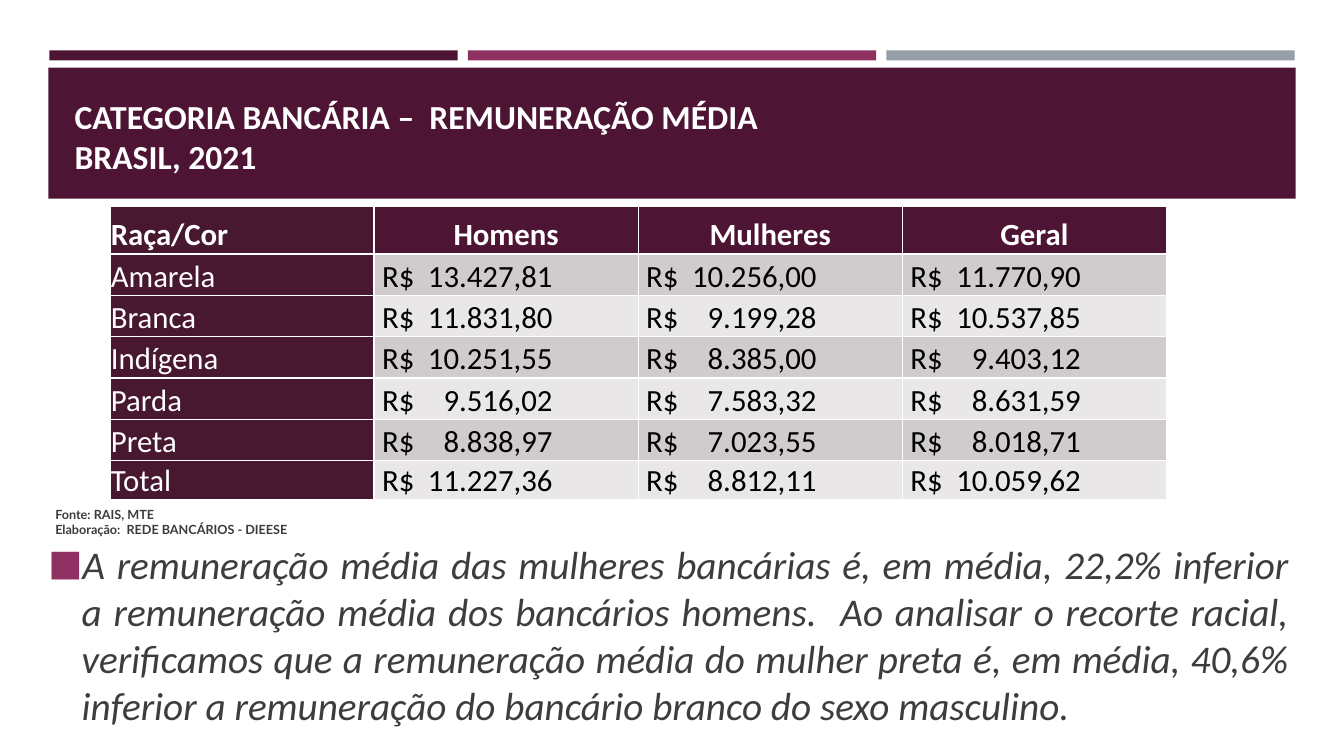
from lxml.etree import SubElement
from pptx import Presentation
from pptx.dml.color import RGBColor
from pptx.enum.shapes import MSO_SHAPE
from pptx.enum.text import MSO_ANCHOR, MSO_AUTO_SIZE, PP_ALIGN
from pptx.oxml.ns import qn
from pptx.util import Inches, Pt

PLUM, ROSE, GREY = "4D1434", "903163", "969FA7"
LABEL_FILL, BANDS = "481831", ("D0CCCE", "E9E7E8")
WHITE, BLACK = "FFFFFF", "000000"

HEADERS = ["Raça/Cor", "Homens", "Mulheres", "Geral"]
SALARIES = [
    ["Amarela", "13.427,81", "10.256,00", "11.770,90"],
    ["Branca", "11.831,80", "9.199,28", "10.537,85"],
    ["Indígena", "10.251,55", "8.385,00", "9.403,12"],
    ["Parda", "9.516,02", "7.583,32", "8.631,59"],
    ["Preta", "8.838,97", "7.023,55", "8.018,71"],
    ["Total", "11.227,36", "8.812,11", "10.059,62"],
]
ROW_HEIGHTS = [0.47] + [0.41] * 5 + [0.39]
FINDING = (
    "A remuneração média das mulheres bancárias é, em média, 22,2% inferior a "
    "remuneração média dos bancários homens.  Ao analisar o recorte racial, "
    "verificamos que a remuneração média do mulher preta é, em média, 40,6% "
    "inferior a remuneração do bancário branco do sexo masculino."
)


def colour(value):
    return RGBColor.from_string(value)


class SalarySlide:
    def __init__(self, deck):
        self.page = deck.slides.add_slide(deck.slide_layouts[1])
        self.font = "Calibri"

    def format_text(self, para, size, ink, bold=False, italic=False, font=None):
        for span in para.runs:
            span.font.name = font or self.font
            span.font.size = Pt(size)
            span.font.bold = bold
            span.font.italic = italic
            span.font.color.rgb = colour(ink)

    def place(self, box, left, top, width, height, anchor):
        box.left, box.top = Inches(left), Inches(top)
        box.width, box.height = Inches(width), Inches(height)
        frame = box.text_frame
        frame.word_wrap = True
        frame.auto_size = MSO_AUTO_SIZE.NONE
        frame.vertical_anchor = anchor
        return frame

    def bar(self, left, top, width, height, fill):
        box = self.page.shapes.add_shape(
            MSO_SHAPE.RECTANGLE, Inches(left), Inches(top), Inches(width), Inches(height)
        )
        box.shadow.inherit = False
        box.fill.solid()
        box.fill.fore_color.rgb = colour(fill)
        box.line.fill.background()
        tree = box.element.getparent()
        tree.remove(box.element)
        tree.insert(tree.index(self.page.shapes.title.element), box.element)

    def title(self, text):
        frame = self.place(self.page.shapes.title, 0.64, 0.69, 12.06, 1.11, MSO_ANCHOR.BOTTOM)
        frame.text = text
        para = frame.paragraphs[0]
        para.alignment = PP_ALIGN.LEFT
        self.format_text(para, 24, WHITE, bold=True)

    def cell(self, cell, text, fill, ink, bold=False, align=PP_ALIGN.LEFT):
        cell.fill.solid()
        cell.fill.fore_color.rgb = colour(fill)
        cell.margin_left = cell.margin_top = cell.margin_right = Inches(0.01)
        cell.margin_bottom = 0
        cell.vertical_anchor = MSO_ANCHOR.BOTTOM
        para = cell.text_frame.paragraphs[0]
        para.text = text
        para.alignment = align
        self.format_text(para, 22, ink, bold=bold)
        return para

    def money(self, cell, amount, fill):
        para = self.cell(cell, f"R$\t{amount}", fill, BLACK)
        cell.margin_left = Inches(0.08)
        stops = SubElement(para._p.get_or_add_pPr(), qn("a:tabLst"))
        SubElement(stops, qn("a:tab"), pos=str(Inches(1.69)), algn="r")

    def table(self, left, top, column_width):
        table = self.page.shapes.add_table(
            len(ROW_HEIGHTS), len(HEADERS), Inches(left), Inches(top),
            Inches(column_width * len(HEADERS)), Inches(sum(ROW_HEIGHTS)),
        ).table
        for row, height in zip(table.rows, ROW_HEIGHTS):
            row.height = Inches(height)
        for column, header in enumerate(HEADERS):
            fill = PLUM if column else LABEL_FILL
            align = PP_ALIGN.CENTER if column else PP_ALIGN.LEFT
            self.cell(table.cell(0, column), header, fill, WHITE, True, align)
        for row, (group, *amounts) in enumerate(SALARIES, 1):
            self.cell(table.cell(row, 0), group, LABEL_FILL, WHITE)
            for column, amount in enumerate(amounts, 1):
                self.money(table.cell(row, column), amount, BANDS[(row - 1) % 2])

    def body(self, text):
        frame = self.place(self.page.placeholders[1], 0.38, 5.24, 12.5, 2.1, MSO_ANCHOR.MIDDLE)
        frame.text = text
        para = frame.paragraphs[0]
        para.alignment = PP_ALIGN.JUSTIFY
        para.space_before = para.space_after = Pt(6)
        self.format_text(para, 28, "3D3D3D", italic=True)
        properties = para._p.get_or_add_pPr()
        properties.set("marL", str(Inches(0.33)))
        properties.set("indent", str(-Inches(0.33)))
        tint = SubElement(properties, qn("a:buClr"))
        SubElement(tint, qn("a:srgbClr"), val=ROSE)
        SubElement(properties, qn("a:buSzPct"), val="92000")
        SubElement(properties, qn("a:buFont"), typeface=self.font)
        SubElement(properties, qn("a:buChar"), char="■")

    def source(self, lines):
        box = self.page.shapes.add_textbox(0, 0, 0, 0)
        frame = self.place(box, 0.45, 4.98, 6.67, 0.4, MSO_ANCHOR.TOP)
        frame.text = "\n".join(lines)
        for para in frame.paragraphs:
            self.format_text(para, 9, "3B3B3B", bold=True, font="Lato")


def main():
    deck = Presentation()
    deck.slide_width, deck.slide_height = Inches(13.33), Inches(7.5)
    slide = SalarySlide(deck)
    for index, fill in enumerate((PLUM, ROSE, GREY)):
        slide.bar(0.49 + 4.15 * index, 0.5, 4.05, 0.1, fill)
    slide.bar(0.48, 0.67, 12.37, 1.3, PLUM)
    slide.title("CATEGORIA BANCÁRIA –  REMUNERAÇÃO MÉDIA\vBRASIL, 2021")
    slide.table(1.09, 2.05, 2.62)
    slide.body(FINDING)
    slide.source(["Fonte: RAIS, MTE", "Elaboração:  REDE BANCÁRIOS - DIEESE"])
    deck.save("out.pptx")


if __name__ == "__main__":
    main()
